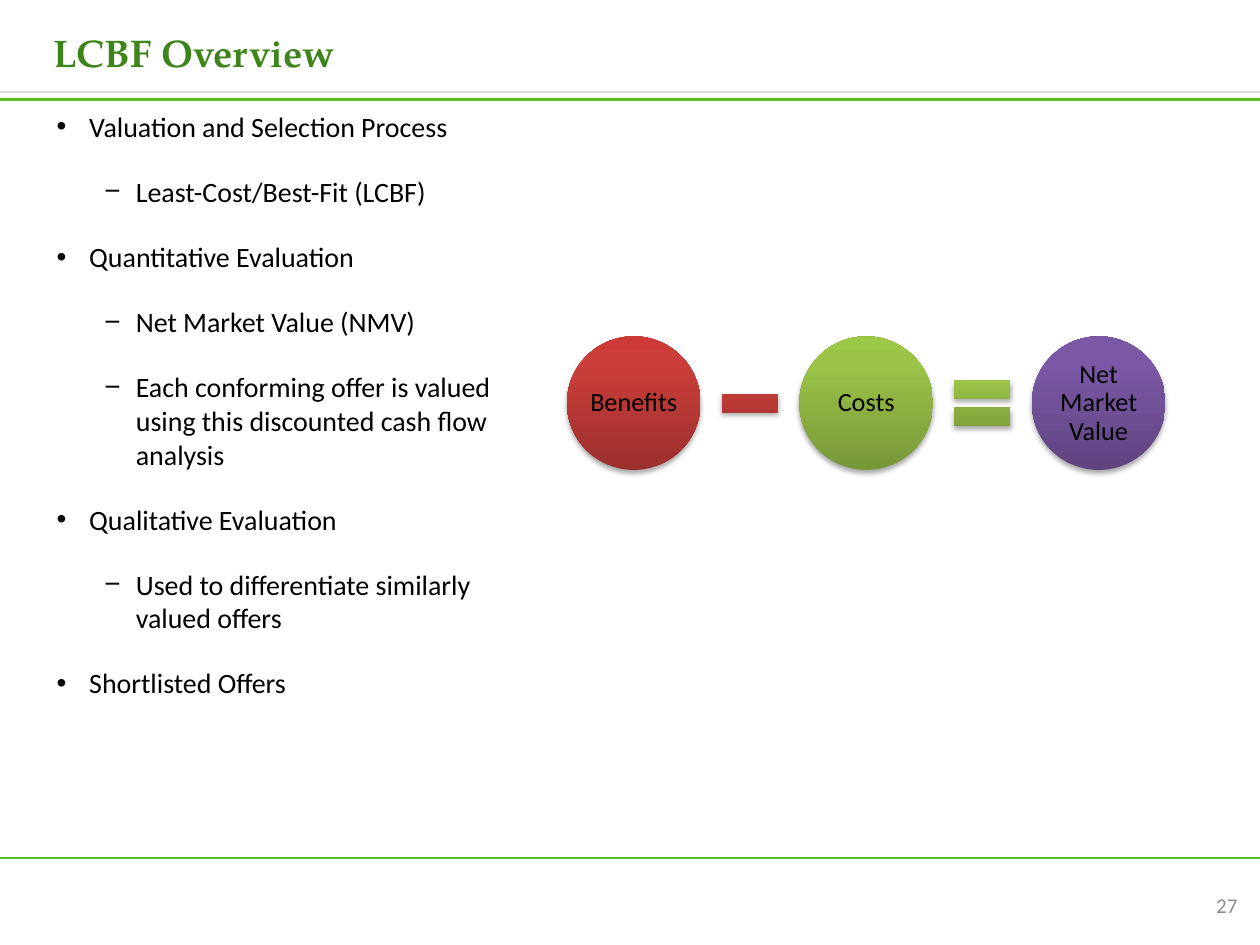
from copy import deepcopy

from lxml.etree import SubElement
from pptx import Presentation
from pptx.dml.color import RGBColor
from pptx.enum.shapes import MSO_CONNECTOR as CONN, MSO_SHAPE as SHAPE
from pptx.enum.text import MSO_ANCHOR as ANCHOR, PP_ALIGN as ALIGN
from pptx.oxml.ns import qn
from pptx.util import Inches, Pt

BLACK = RGBColor(0x00, 0x00, 0x00)
BULLET = "060606"
GRAY = RGBColor(0x8C, 0x8C, 0x8C)
RULE_GRAY = RGBColor(0xD9, 0xD9, 0xD9)
RULE_GREEN = RGBColor(0x58, 0xBD, 0x25)
TITLE_GREEN = RGBColor(0x3D, 0x84, 0x1A)
# Gradient stops, from bottom to top
RED = [RGBColor(0x9C, 0x2F, 0x2D), RGBColor(0xCB, 0x3E, 0x3A), RGBColor(0xCE, 0x3B, 0x37)]
GREEN = [RGBColor(0x77, 0x97, 0x37), RGBColor(0x9B, 0xC3, 0x48), RGBColor(0x9D, 0xC7, 0x46)]
PURPLE = [RGBColor(0x5F, 0x44, 0x80), RGBColor(0x7B, 0x58, 0xA6), RGBColor(0x7C, 0x57, 0xA8)]

prs = Presentation()
prs.slide_width, prs.slide_height = Inches(10), Inches(7.5)
s = prs.slides.add_slide(prs.slide_layouts[6])


def add_run(p, text, size, color, font="Calibri", bold=False):
    r = p.add_run()
    r.text = text
    r.font.size, r.font.name, r.font.bold = Pt(size), font, bold
    r.font.color.rgb = color


def add_glossy(kind, center_x, center_y, size, colors):
    sp = s.shapes.add_shape(kind, Inches(center_x - size / 2), Inches(center_y - size / 2),
                            Inches(size), Inches(size))
    sp.line.fill.background()
    sp.fill.gradient()
    sp.fill.gradient_angle = 90
    stops = sp._element.spPr.find(".//" + qn("a:gsLst"))
    stops.append(deepcopy(stops[0]))
    for stop, pos, color in zip(sp.fill.gradient_stops, (0, 0.8, 1), colors):
        stop.position = pos
        stop.color.rgb = color
    # Soft shadow straight below
    sp.shadow.inherit = False
    effects = sp._element.spPr.find(qn("a:effectLst"))
    shadow = SubElement(effects, qn("a:outerShdw"), blurRad=str(Pt(3.1)), dist=str(Pt(1.8)),
                        dir="5400000", rotWithShape="0")
    black = SubElement(shadow, qn("a:srgbClr"), val="000000")
    SubElement(black, qn("a:alpha"), val="35000")
    return sp


# Rules across the slide
for y, color, width in [(0.73, RULE_GRAY, 1.5), (6.81, RULE_GREEN, 1.5), (0.79, RULE_GREEN, 2.25)]:
    ln = s.shapes.add_connector(CONN.STRAIGHT, 0, Inches(y), prs.slide_width, Inches(y))
    ln.line.color.rgb, ln.line.width = color, Pt(width)
    SubElement(ln._element.spPr, qn("a:effectLst"))

# Title
tf = s.shapes.add_textbox(Inches(0.33), Inches(0.08), Inches(9), Inches(0.67)).text_frame
tf.word_wrap, tf.vertical_anchor = True, ANCHOR.MIDDLE
add_run(tf.paragraphs[0], "LCBF Overview", 22, TITLE_GREEN, "TeX Gyre Pagella", True)

# Slide number
tf = s.shapes.add_textbox(Inches(7.59), Inches(6.98), Inches(2.33), Inches(0.4)).text_frame
tf.word_wrap, tf.vertical_anchor = True, ANCHOR.MIDDLE
tf.paragraphs[0].alignment = ALIGN.RIGHT
add_run(tf.paragraphs[0], "27", 12, GRAY)

# Bullet list: level and text
BULLETS = [
    (0, "Valuation and Selection Process"),
    (1, "Least-Cost/Best-Fit (LCBF)"),
    (0, "Quantitative Evaluation"),
    (1, "Net Market Value (NMV)"),
    (1, "Each conforming offer is valued using this discounted cash flow analysis"),
    (0, "Qualitative Evaluation"),
    (1, "Used to differentiate similarly valued offers"),
    (0, "Shortlisted Offers"),
]
LEVELS = [(0.26, -0.26, "•"), (0.63, -0.25, "−")]
tf = s.shapes.add_textbox(Inches(0.35), Inches(0.82), Inches(3.99), Inches(5.52)).text_frame
tf.word_wrap = True
for i, (level, text) in enumerate(BULLETS):
    p = tf.add_paragraph() if i else tf.paragraphs[0]
    margin, indent, char = LEVELS[level]
    p.level, p.space_after = level, Pt(18)
    pPr = p._p.get_or_add_pPr()
    pPr.set("marL", str(Inches(margin)))
    pPr.set("indent", str(Inches(indent)))
    SubElement(SubElement(pPr, qn("a:buClr")), qn("a:srgbClr"), val=BULLET)
    SubElement(pPr, qn("a:buFont"), typeface="Arial")
    SubElement(pPr, qn("a:buChar"), char=char)
    add_run(p, text, 16, BLACK)

# Equation: circles at an equal pitch, operators halfway between
FIRST_X, ROW_Y, PITCH = 5.03, 3.2, 3.69 / 2
CIRCLE, OPERATOR = 1.06, 0.61
TERMS = [
    ("Benefits", RED, SHAPE.MATH_MINUS),
    ("Costs", GREEN, SHAPE.MATH_EQUAL),
    ("Net Market Value", PURPLE, None),
]
for i, (text, colors, operator) in enumerate(TERMS):
    x = FIRST_X + i * PITCH
    tf = add_glossy(SHAPE.OVAL, x, ROW_Y, CIRCLE, colors).text_frame
    tf.word_wrap, tf.vertical_anchor = True, ANCHOR.MIDDLE
    tf.margin_left = tf.margin_right = tf.margin_top = tf.margin_bottom = Inches(0.02)
    p = tf.paragraphs[0]
    p.alignment, p.line_spacing = ALIGN.CENTER, 0.9
    add_run(p, text, 15, BLACK)
    if operator is not None:
        add_glossy(operator, x + PITCH / 2, ROW_Y, OPERATOR, colors)

prs.save("out.pptx")
